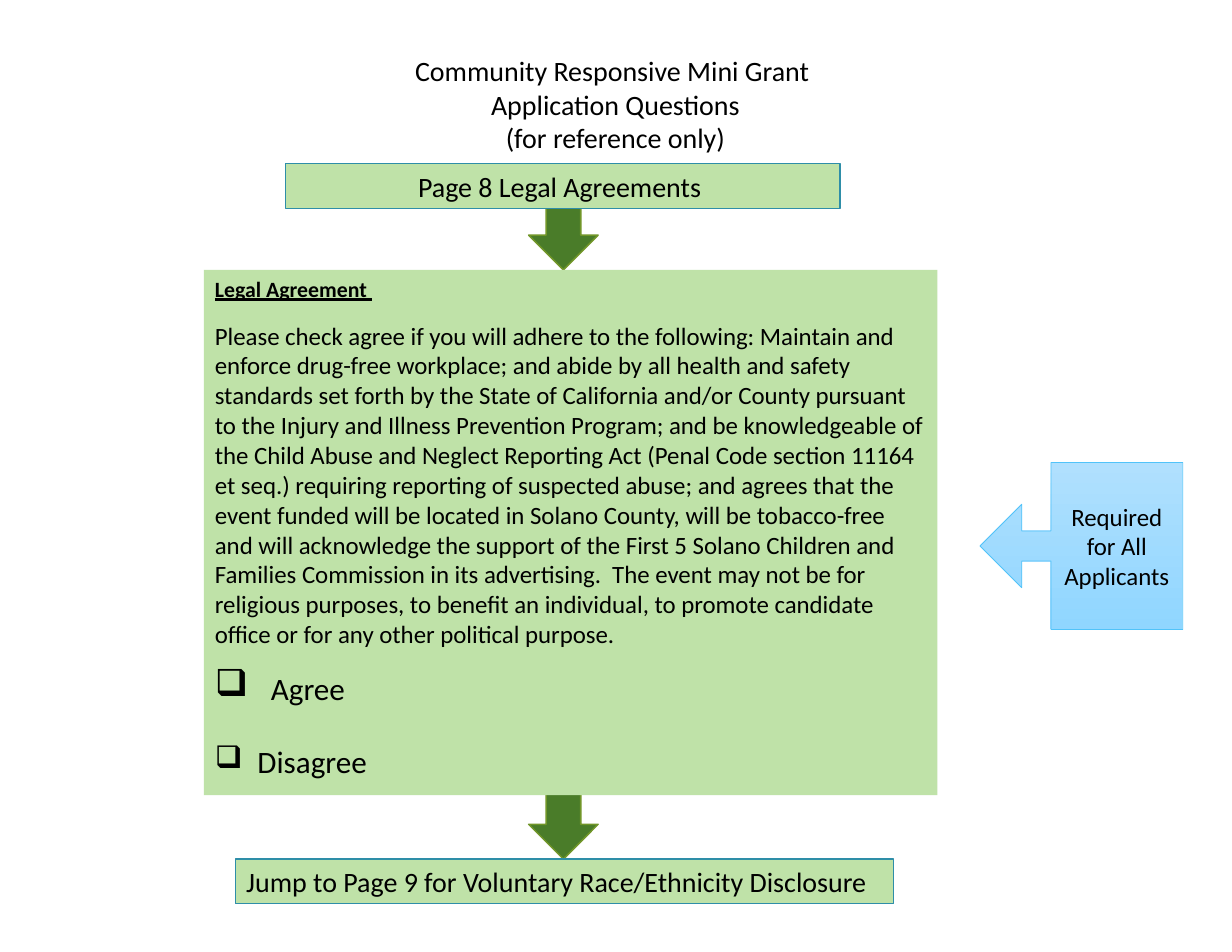
from lxml import etree
from pptx import Presentation
from pptx.dml.color import RGBColor
from pptx.enum.shapes import MSO_SHAPE
from pptx.enum.text import MSO_ANCHOR, MSO_AUTO_SIZE, PP_ALIGN
from pptx.oxml.ns import qn
from pptx.util import Inches, Pt

RECTANGLE, RIGHT_ARROW = MSO_SHAPE.RECTANGLE, MSO_SHAPE.RIGHT_ARROW
CALLOUT = MSO_SHAPE.LEFT_ARROW_CALLOUT
TOP, MIDDLE = MSO_ANCHOR.TOP, MSO_ANCHOR.MIDDLE
LEFT, CENTER = PP_ALIGN.LEFT, PP_ALIGN.CENTER

FONT = "Calibri"
COLORS = {
    "text": "000000",
    "box": "BFE2A8",
    "box line": "2E8EA8",
    "arrow": "4A7C29",
    "arrow line": "719629",
    "callout top": "B0E0FE",
    "callout bottom": "90D6FF",
    "callout line": "51C3F9",
}

TITLE = "Community Responsive Mini Grant \nApplication Questions\n(for reference only)"
HEADING = "Legal Agreement "
AGREEMENT = (
    "Please check agree if you will adhere to the following: Maintain and enforce "
    "drug-free workplace; and abide by all health and safety standards set forth by "
    "the State of California and/or County pursuant to the Injury and Illness "
    "Prevention Program; and be knowledgeable of the Child Abuse and Neglect Reporting "
    "Act (Penal Code section 11164 et seq.) requiring reporting of suspected abuse; and "
    "agrees that the event funded will be located in Solano County, will be tobacco-free "
    "and will acknowledge the support of the First 5 Solano Children and Families "
    "Commission in its advertising.  The event may not be for religious purposes, to "
    "benefit an individual, to promote candidate office or for any other political purpose."
)
# text, indent in inches, space before in points, bullet size in percent
CHOICES = [("Agree", 0.5, 7, 120), ("Disagree", 0.38, 20, 100)]
# text, left, top, width, height, alignment
PAGE_BOXES = [
    ("Page 8 Legal Agreements ", 2.55, 1.46, 4.95, 0.4, CENTER),
    ("Jump to Page 9 for Voluntary Race/Ethnicity Disclosure", 2.1, 7.67, 5.88, 0.4, LEFT),
]
# top and length of each downward arrow
ARROWS = [(6.42, 1.25), (1.75, 0.66)]
ARROW_CENTER, ARROW_BREADTH = 5.03, 0.62


def color(name):
    return RGBColor.from_string(COLORS[name])


def add_shape(slide, kind, left, top, width, height, fill=None, line=None, line_width=1):
    shape = slide.shapes.add_shape(
        kind, Inches(left), Inches(top), Inches(width), Inches(height))
    shape.shadow.inherit = False
    if fill:
        shape.fill.solid()
        shape.fill.fore_color.rgb = color(fill)
    if line:
        shape.line.color.rgb = color(line)
        shape.line.width = Pt(line_width)
    else:
        shape.line.fill.background()
    return shape


def format_paragraph(paragraph, size, alignment=LEFT, before=0, after=0):
    paragraph.alignment = alignment
    paragraph.space_before, paragraph.space_after = Pt(before), Pt(after)
    for run in paragraph.runs:
        run.font.name, run.font.size = FONT, Pt(size)
        run.font.color.rgb = color("text")


def write(shape, text, size, alignment, anchor=MIDDLE):
    frame = shape.text_frame
    frame.text = text
    frame.word_wrap = True
    frame.auto_size = MSO_AUTO_SIZE.NONE
    frame.vertical_anchor = anchor
    for paragraph in frame.paragraphs:
        format_paragraph(paragraph, size, alignment)


def add_checkbox(paragraph, indent, percent):
    properties = paragraph._p.get_or_add_pPr()
    properties.set("marL", str(Inches(indent)))
    properties.set("indent", str(-Inches(indent)))
    etree.SubElement(properties, qn("a:buSzPct"), val=str(percent * 1000))
    etree.SubElement(properties, qn("a:buChar"), char="❑")


def add_arrow(slide, top, length):
    """Turn a right arrow about its centre so that it points down from top."""
    shape = add_shape(
        slide, RIGHT_ARROW, ARROW_CENTER - length / 2,
        top + length / 2 - ARROW_BREADTH / 2, length, ARROW_BREADTH,
        "arrow", "arrow line")
    shape.rotation = 90


def add_agreement(slide):
    box = add_shape(slide, RECTANGLE, 1.82, 2.41, 6.55, 4.69, "box")
    write(box, "\n".join([HEADING, AGREEMENT] + [choice[0] for choice in CHOICES]),
          16, LEFT, TOP)
    heading, body, *choices = box.text_frame.paragraphs
    format_paragraph(heading, 14, after=6)
    heading.runs[0].font.bold = heading.runs[0].font.underline = True
    format_paragraph(body, 16, before=6, after=6)
    for paragraph, (_, indent, before, percent) in zip(choices, CHOICES):
        format_paragraph(paragraph, 20, before=before, after=3)
        add_checkbox(paragraph, indent, percent)


def add_callout(slide):
    callout = add_shape(slide, CALLOUT, 8.75, 4.13, 1.81, 1.49,
                        line="callout line", line_width=0.5)
    for index, value in enumerate([0.18, 0.25, 0.25, 0.65]):
        callout.adjustments[index] = value
    callout.fill.gradient()
    callout.fill.gradient_angle = 270
    for stop, name in zip(callout.fill.gradient_stops, ["callout top", "callout bottom"]):
        stop.color.rgb = color(name)
    write(callout, "Required for All Applicants", 16, CENTER)


def main():
    presentation = Presentation()
    presentation.slide_width, presentation.slide_height = Inches(11), Inches(8.5)
    slide = presentation.slides.add_slide(presentation.slide_layouts[5])

    title = slide.shapes.title
    title.left, title.top = Inches(3.02), Inches(0.43)
    title.width, title.height = Inches(4.95), Inches(1.01)
    write(title, TITLE, 18, CENTER, TOP)

    for top, length in ARROWS:
        add_arrow(slide, top, length)
    add_agreement(slide)
    for text, left, top, width, height, alignment in PAGE_BOXES:
        box = add_shape(slide, RECTANGLE, left, top, width, height, "box", "box line", 0.75)
        write(box, text, 18, alignment)
    add_callout(slide)

    presentation.save("out.pptx")


if __name__ == "__main__":
    main()
